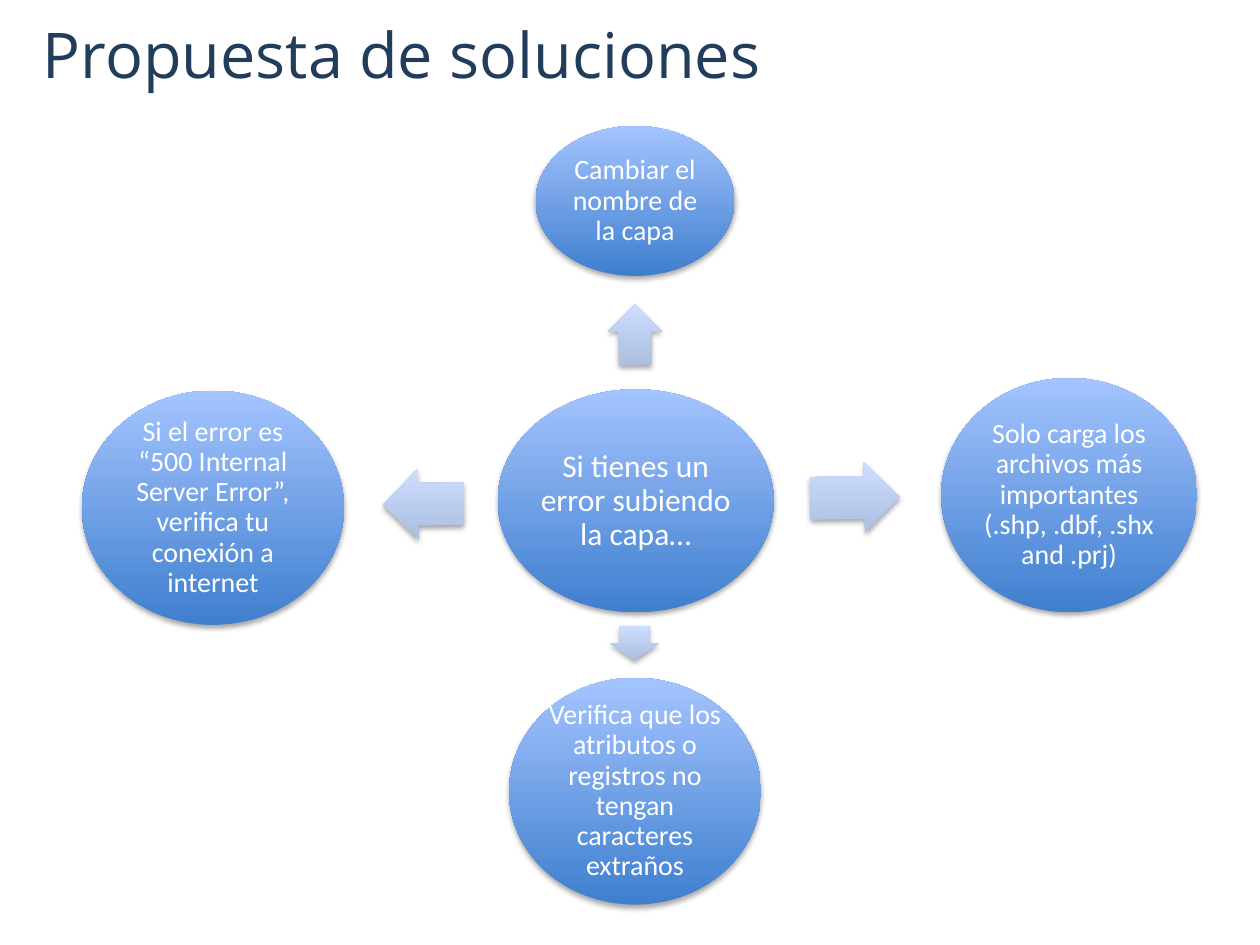
from dataclasses import dataclass

from lxml import etree
from pptx import Presentation
from pptx.dml.color import RGBColor
from pptx.enum.shapes import MSO_SHAPE
from pptx.enum.text import MSO_ANCHOR, PP_ALIGN
from pptx.oxml.ns import qn
from pptx.util import Pt

ELLIPSE, ARROW = MSO_SHAPE.OVAL, MSO_SHAPE.RIGHT_ARROW
TOP, MIDDLE = MSO_ANCHOR.TOP, MSO_ANCHOR.MIDDLE
LEFT, CENTER = PP_ALIGN.LEFT, PP_ALIGN.CENTER
PX = 9144
TITLE_ONLY = 5


@dataclass(frozen=True)
class Theme:
    """Colours, fonts and type sizes of the slide."""
    title: str = "223D5C"
    label: str = "FFFFFF"
    bubble: tuple = ("3F7FCE", "A4C4FF")
    arrow: tuple = ("ADBFE1", "CCDDFF")
    shadow: str = "000000"
    title_font: str = "Open Sans"
    body_font: str = "Calibri"
    title_size: int = 36
    hub_size: int = 18
    solution_size: int = 16


THEME = Theme()
PROBLEM = ("Si tienes un error subiendo la capa…", (330, 209, 219, 177))
SOLUTIONS = [
    ("Cambiar el nombre de la capa",
     (360, 0, 158, 119), (415, 144, 48, 43), 269.9),
    ("Solo carga los archivos más importantes (.shp, .dbf, .shx and .prj)",
     (682, 200, 203, 186), (578, 267, 71, 56), 359.2),
    ("Verifica que los atributos o registros no tengan caracteres extraños",
     (339, 438, 200, 180), (425, 391, 27, 39), 90),
    ("Si el error es “500 Internal Server Error”, verifica tu conexión a internet",
     (0, 210, 208, 186), (239, 272, 64, 56), 179.1),
]


def place(box, part):
    """Return the EMU frame of a part measured from the corner of its box."""
    left, top, width, height = part
    return [n * PX for n in (box[0] + left, box[1] + top, width, height)]


def write(paragraph, text, font, size, color):
    """Add one formatted run to a paragraph."""
    run = paragraph.add_run()
    run.text = text
    run.font.name = font
    run.font.size = Pt(size)
    run.font.color.rgb = RGBColor.from_string(color)


def add_shadow(shape):
    """Give a shape a soft shadow straight below it."""
    shape.shadow.inherit = False
    effects = shape._element.spPr.find(qn("a:effectLst"))
    outer = etree.SubElement(effects, qn("a:outerShdw"), blurRad="40000",
                             dist="23000", dir="5400000", rotWithShape="0")
    color = etree.SubElement(outer, qn("a:srgbClr"), val=THEME.shadow)
    etree.SubElement(color, qn("a:alpha"), val="35000")


def add_gradient_shape(group, preset, frame, colors):
    """Add a borderless shape with an upright gradient and a shadow."""
    shape = group.shapes.add_shape(preset, *frame)
    shape.fill.gradient()
    shape.fill.gradient_angle = 90
    for stop, color, position in zip(shape.fill.gradient_stops, colors, (0, 1)):
        stop.color.rgb = RGBColor.from_string(color)
        stop.position = position
    shape._element.spPr.find(qn("a:gradFill")).set("rotWithShape", "0")
    shape.line.fill.background()
    add_shadow(shape)
    return shape


def add_bubble(group, frame, text, size):
    """Add an ellipse with its centred label."""
    bubble = add_gradient_shape(group, ELLIPSE, frame, THEME.bubble)
    label = bubble.text_frame
    label.word_wrap = True
    label.vertical_anchor = MIDDLE
    label.margin_left = label.margin_right = 2 * PX
    label.margin_top = label.margin_bottom = 2 * PX
    paragraph = label.paragraphs[0]
    paragraph.alignment = CENTER
    paragraph.line_spacing = 0.9
    write(paragraph, text, THEME.body_font, size, THEME.label)


def add_arrow(group, frame, rotation):
    """Add a block arrow turned towards its solution."""
    arrow = add_gradient_shape(group, ARROW, frame, THEME.arrow)
    arrow.adjustments[0] = 0.6
    arrow.adjustments[1] = 0.5
    arrow.rotation = rotation


def add_title(slide, box, text):
    """Move the title placeholder into its box and fill it."""
    title = slide.shapes.title
    title.left, title.top, title.width, title.height = place(box, (0, 0, *box[2:]))
    title.text_frame.vertical_anchor = TOP
    paragraph = title.text_frame.paragraphs[0]
    paragraph.alignment = LEFT
    write(paragraph, text, THEME.title_font, THEME.title_size, THEME.title)


def add_radial_diagram(slide, box):
    """Place the problem and the solutions around it inside the box."""
    group = slide.shapes.add_group_shape()
    problem, hub = PROBLEM
    add_bubble(group, place(box, hub), problem, THEME.hub_size)
    for solution, bubble, arrow, rotation in SOLUTIONS:
        add_arrow(group, place(box, arrow), rotation)
        add_bubble(group, place(box, bubble), solution, THEME.solution_size)


def main():
    """Build and save the slide."""
    deck = Presentation()
    deck.slide_width, deck.slide_height = 1000 * PX, 750 * PX
    slide = deck.slides.add_slide(deck.slide_layouts[TITLE_ONLY])
    add_title(slide, (24, 7, 768, 125), "Propuesta de soluciones")
    add_radial_diagram(slide, (65, 100, 885, 618))
    deck.save("out.pptx")


if __name__ == "__main__":
    main()
